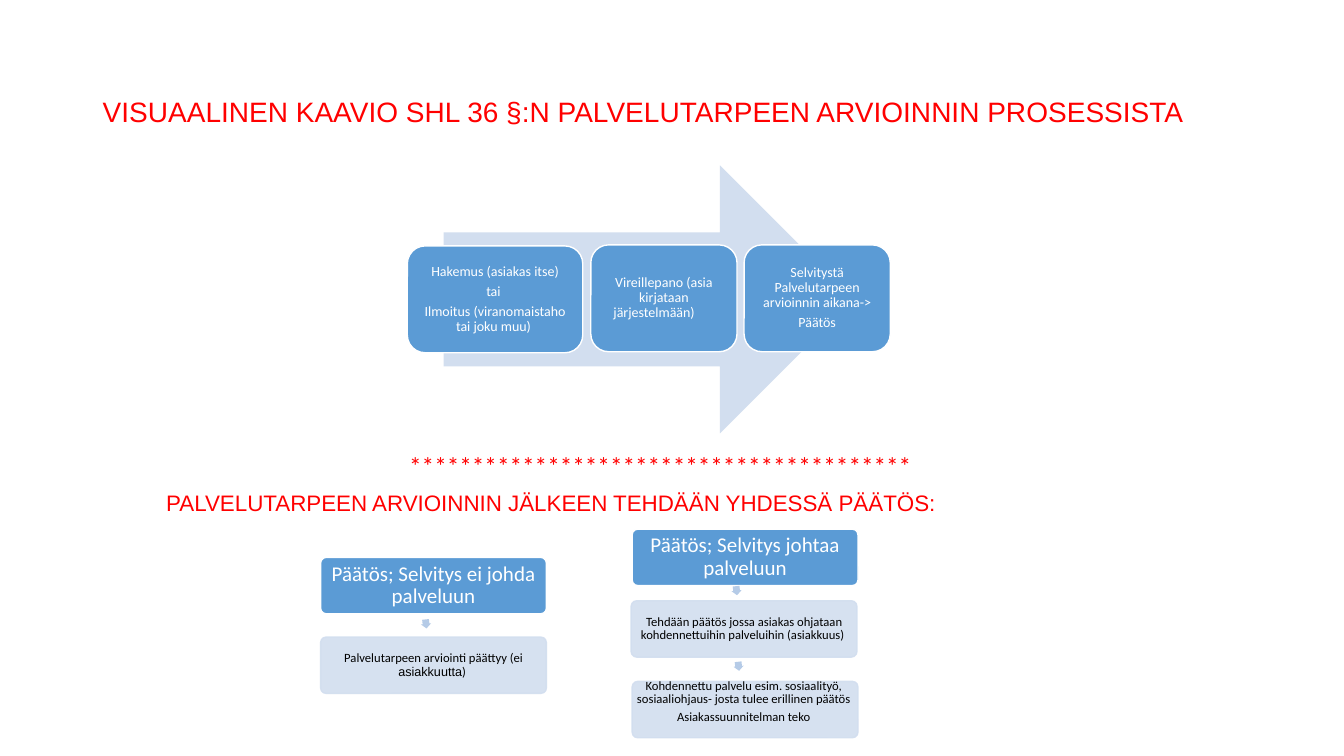
from pptx import Presentation
from pptx.util import Pt
from pptx.dml.color import RGBColor as Rgb
from pptx.enum.shapes import MSO_SHAPE as Kind
from pptx.enum.text import PP_ALIGN as Align, MSO_ANCHOR as Anchor
from pptx.oxml.ns import qn
from lxml.etree import SubElement as Sub

PX = 9144
RED = Rgb(0xFF, 0, 0)
WHITE = Rgb(0xFF, 0xFF, 0xFF)
BLACK = Rgb(0, 0, 0)
BLUE = Rgb(0x5B, 0x9B, 0xD5)
PALE = Rgb(0xD2, 0xDE, 0xEF)
MID = Rgb(0xB5, 0xCB, 0xE7)

TITLE = "VISUAALINEN KAAVIO SHL 36 §:N PALVELUTARPEEN ARVIOINNIN PROSESSISTA"
HEAD = "PALVELUTARPEEN ARVIOINNIN JÄLKEEN TEHDÄÄN YHDESSÄ PÄÄTÖS:"
STARS = "*" * 40
STEPS = [
    (404, 244, 174, ["Hakemus (asiakas itse)", "tai ",
                     "Ilmoitus (viranomaistaho tai joku muu) "]),
    (586, 243, 145, ["Vireillepano (asia kirjataan järjestelmään) \t"]),
    (738, 243, 145, ["Selvitystä Palvelutarpeen arvioinnin aikana->", "Päätös"]),
]
HEADS = [
    (318, 553, ["Päätös; Selvitys ei johda palveluun"]),
    (627, 525, ["Päätös; Selvitys johtaa palveluun"]),
]
NOTES = [
    (318, 632, ["Palvelutarpeen arviointi päättyy (ei |asiakkuutta|) "]),
    (626, 596, ["Tehdään päätös jossa asiakas ohjataan kohdennettuihin "
                "palveluihin (asiakkuus) "]),
    (627, 676, []),
]
LAST = ["Kohdennettu palvelu esim. sosiaalityö, sosiaaliohjaus- josta tulee "
        "erillinen päätös", "Asiakassuunnitelman teko"]
TIPS = [(418, 614), (726, 581), (728, 656)]

deck = Presentation()
deck.slide_width, deck.slide_height = 1333 * PX, 750 * PX
slide = deck.slides.add_slide(deck.slide_layouts[6])


def write(shape, paras, size, color, font="Calibri", align=Align.CENTER,
          lead=0.9, after=0.35, pad=None, anchor=Anchor.MIDDLE, wrap=True):
    frame = shape.text_frame
    frame.word_wrap = wrap
    frame.vertical_anchor = anchor
    if pad is not None:
        frame.margin_left = frame.margin_right = pad * PX
        frame.margin_top = frame.margin_bottom = pad * PX
    for i, text in enumerate(paras):
        para = frame.paragraphs[0] if i == 0 else frame.add_paragraph()
        para.alignment = align
        para.line_spacing = lead
        para.space_after = Pt(size * after)
        for j, part in enumerate(text.split("|")):
            run = para.add_run()
            run.text = part
            run.font.size = Pt(size)
            run.font.name = "Arial" if j % 2 else font
            run.font.color.rgb = color


def text(x, y, w, h, paras, **fmt):
    box = slide.shapes.add_textbox(x * PX, y * PX, w * PX, h * PX)
    write(box, paras, **fmt)


def draw(kind, x, y, w, h, fill, line=None, alpha=None, adj=()):
    shape = slide.shapes.add_shape(kind, x * PX, y * PX, w * PX, h * PX)
    shape.shadow.inherit = False
    for i, value in enumerate(adj):
        shape.adjustments[i] = value
    shape.fill.solid()
    shape.fill.fore_color.rgb = fill
    if line is None:
        shape.line.fill.background()
    else:
        shape.line.color.rgb = line
        shape.line.width = Pt(1)
    if alpha:
        for color in shape.element.spPr.iter(qn("a:srgbClr")):
            Sub(color, qn("a:alpha"), val=str(alpha * 1000))
    return shape


text(92, 40, 1150, 145, [TITLE], size=20, color=RED, font="Arial",
     align=Align.LEFT, after=0)
draw(Kind.RIGHT_ARROW, 440, 164, 407, 266, PALE)
for x, y, w, paras in STEPS:
    card = draw(Kind.ROUNDED_RECTANGLE, x, y, w, 106, BLUE, WHITE)
    write(card, paras, size=10, color=WHITE, pad=4)

text(396, 440, 525, 43, [STARS], size=18, color=RED, align=Align.LEFT,
     lead=1.07, anchor=Anchor.TOP, wrap=False)
for x, y, paras in HEADS:
    card = draw(Kind.ROUNDED_RECTANGLE, x, y, 224, 56, BLUE, WHITE, adj=[0.1])
    write(card, paras, size=15, color=WHITE, pad=2)
for x, y, paras in NOTES:
    card = draw(Kind.ROUNDED_RECTANGLE, x, y, 224, 56, PALE, PALE, 90, [0.1])
    write(card, paras, size=9, color=BLACK, pad=1)
text(627, 670, 221, 53, LAST, size=9, color=BLACK, pad=1)
text(155, 480, 845, 37, [HEAD], size=16, color=RED, font="Arial",
     align=Align.LEFT, lead=1.0, after=0, anchor=Anchor.TOP)
for x, y in TIPS:
    tip = draw(Kind.RIGHT_ARROW, x, y, 9, 10, MID, adj=[0.67, 0.5])
    tip.rotation = 83.6

deck.save("out.pptx")
